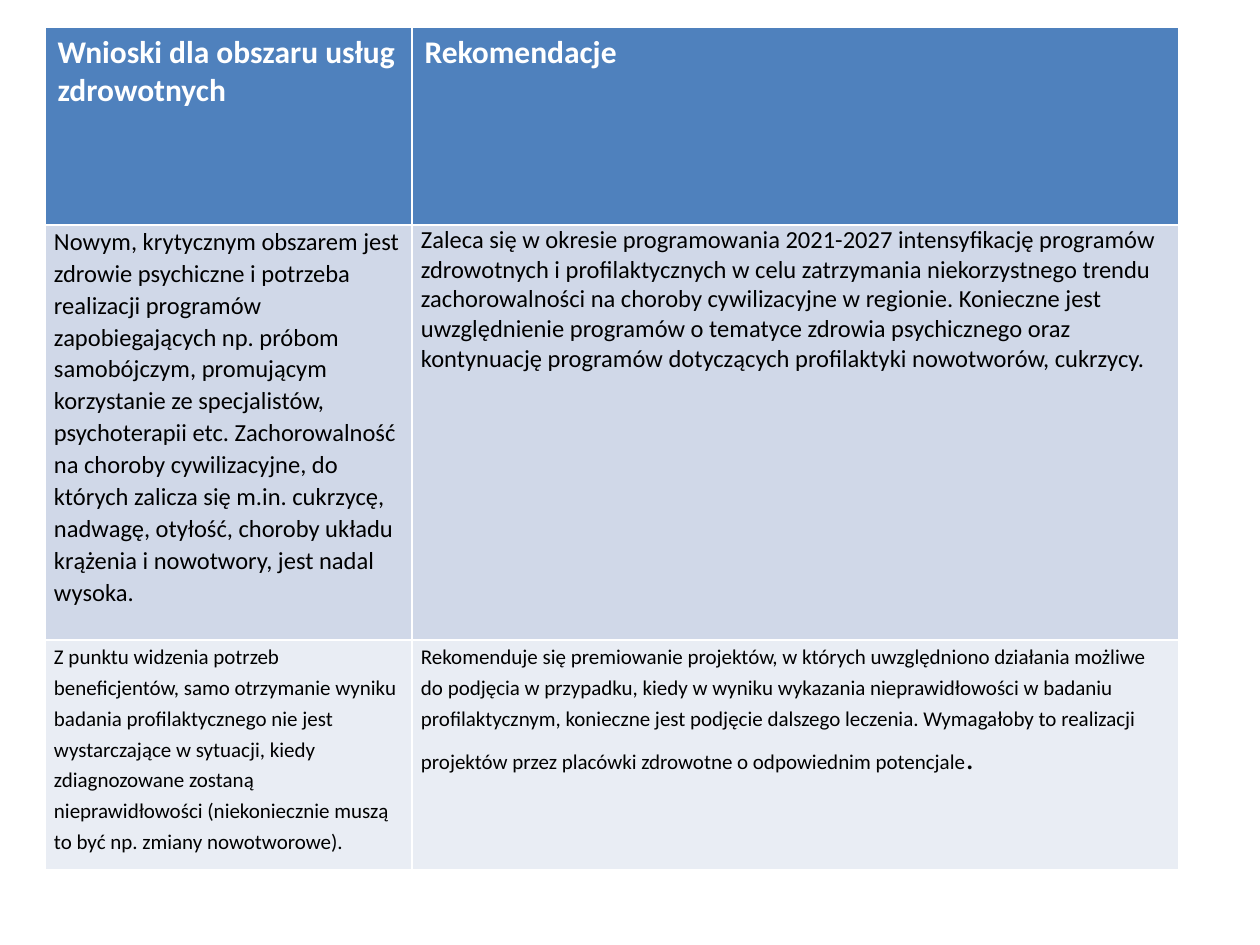
"""Build a slide with a table of health service conclusions and recommendations."""
from pptx import Presentation
from pptx.dml.color import RGBColor
from pptx.util import Pt

PX = 914400 / 126
COLORS = {
    "header": "4F81BD",
    "band_dark": "D0D8E8",
    "band_light": "E9EDF4",
    "header_text": "FFFFFF",
    "body_text": "000000",
}


def px(length):
    return round(length * PX)


deck = Presentation()
deck.slide_width, deck.slide_height = px(1260), px(945)
page = deck.slides.add_slide(deck.slide_layouts[6])

column_widths = [367, 767]
rows = [
    (198, "header", 18, [
        ("Wnioski dla obszaru usług zdrowotnych", None),
        ("Rekomendacje", None),
    ]),
    (415, "band_dark", 14, [
        ("Nowym, krytycznym obszarem jest zdrowie psychiczne i potrzeba realizacji "
         "programów zapobiegających np. próbom samobójczym, promującym korzystanie ze "
         "specjalistów, psychoterapii etc. Zachorowalność na choroby cywilizacyjne, do "
         "których zalicza się m.in. cukrzycę, nadwagę, otyłość, choroby układu krążenia "
         "i nowotwory, jest nadal wysoka.", 1.07),
        ("Zaleca się w okresie programowania 2021-2027 intensyfikację programów "
         "zdrowotnych i profilaktycznych w celu zatrzymania niekorzystnego trendu "
         "zachorowalności na choroby cywilizacyjne w regionie. Konieczne jest "
         "uwzględnienie programów o tematyce zdrowia psychicznego oraz kontynuację "
         "programów dotyczących profilaktyki nowotworów, cukrzycy.", None),
    ]),
    (230, "band_light", 12, [
        ("Z punktu widzenia potrzeb beneficjentów, samo otrzymanie wyniku badania "
         "profilaktycznego nie jest wystarczające w sytuacji, kiedy zdiagnozowane "
         "zostaną nieprawidłowości (niekoniecznie muszą to być np. zmiany "
         "nowotworowe).", 1.2),
        ("Rekomenduje się premiowanie projektów, w których uwzględniono działania "
         "możliwe do podjęcia w przypadku, kiedy w wyniku wykazania nieprawidłowości "
         "w badaniu profilaktycznym, konieczne jest podjęcie dalszego leczenia. "
         "Wymagałoby to realizacji projektów przez placówki zdrowotne o odpowiednim "
         "potencjale", 1.2),
    ]),
]

table_height = sum(row[0] for row in rows)
table = page.shapes.add_table(
    len(rows), len(column_widths), px(45), px(27), px(sum(column_widths)), px(table_height)
).table
for column, width in zip(table.columns, column_widths):
    column.width = px(width)

for row_index, (height, fill, size, entries) in enumerate(rows):
    table.rows[row_index].height = px(height)
    is_header = fill == "header"
    for column_index, (text, spacing) in enumerate(entries):
        cell = table.cell(row_index, column_index)
        cell.fill.solid()
        cell.fill.fore_color.rgb = RGBColor.from_string(COLORS[fill])
        if not is_header:
            cell.margin_left = cell.margin_right = px(9)
            cell.margin_top = cell.margin_bottom = 0
        para = cell.text_frame.paragraphs[0]
        para.add_run().text = text
        para.font.name = "Calibri"
        para.font.size = Pt(size)
        para.font.bold = is_header
        text_color = COLORS["header_text" if is_header else "body_text"]
        para.font.color.rgb = RGBColor.from_string(text_color)
        if spacing:
            para.line_spacing = spacing
            para.space_before = para.space_after = Pt(6)

full_stop = table.cell(2, 1).text_frame.paragraphs[0].add_run()
full_stop.text = "."
full_stop.font.size = Pt(18)

deck.save("out.pptx")
